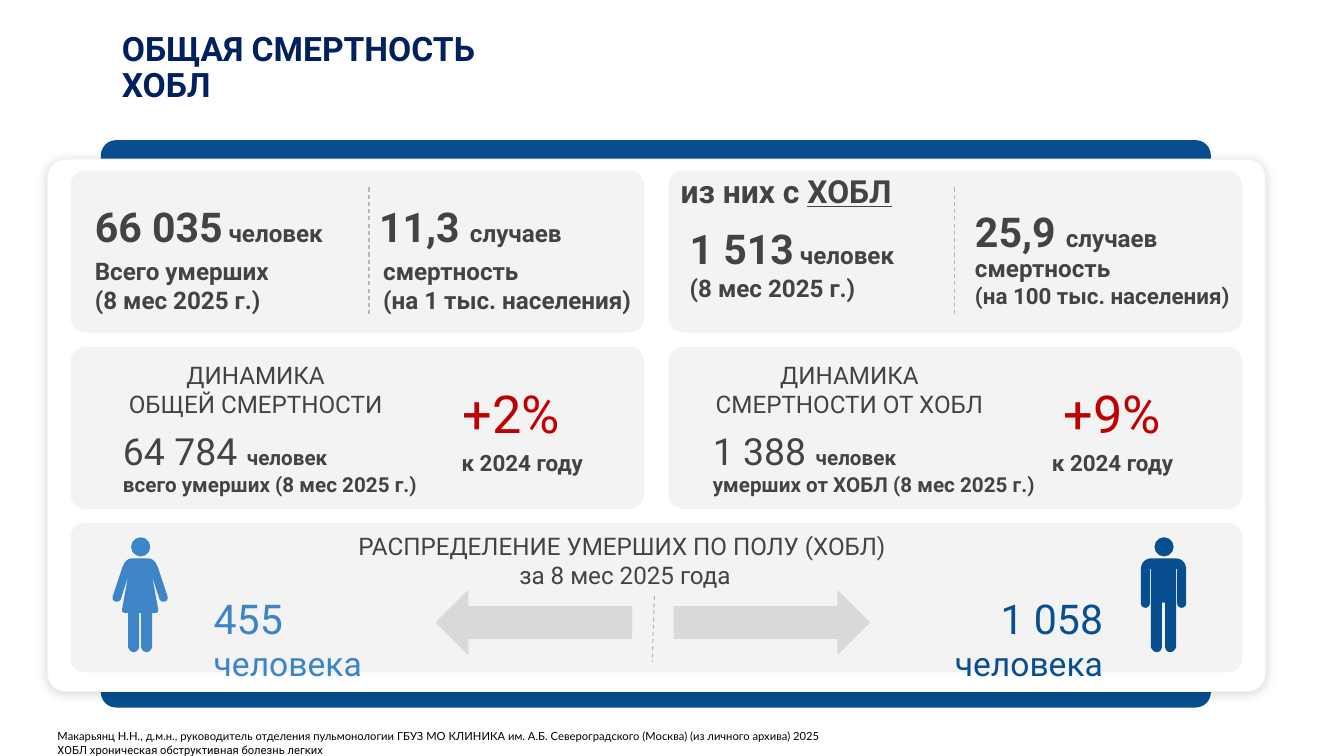
from lxml.etree import SubElement
from pptx import Presentation
from pptx.dml.color import RGBColor
from pptx.enum.dml import MSO_LINE
from pptx.enum.shapes import MSO_CONNECTOR, MSO_SHAPE
from pptx.enum.text import MSO_ANCHOR, MSO_AUTO_SIZE, PP_ALIGN
from pptx.oxml.ns import qn
from pptx.util import Inches, Pt

NAVY, BLUE, SKY, RED = "002060", "084F91", "3D85C6", "C00000"
DARK, PALE, GREY, RULE = "434343", "F3F3F3", "D9D9D9", "B7B7B7"
BIG = {"size": 29.3, "bold": True}
MID = {"size": 17.3, "bold": True}
SMALL = {"size": 14.7, "bold": True}
PLAIN = {"size": 17.3}
PAD = (0.13, 0.07)

# Right half of each figure, in hundredths of an inch from the top centre:
# a pair is a straight step, six numbers are a Bezier step.
MAN = [(0, 21), (12.5, 21), (18.5, 21, 22.5, 26, 22.5, 32), (22.5, 65),
       (22.5, 68, 20.5, 70, 18, 70), (15.5, 70, 13.5, 68, 13.5, 65),
       (13.5, 32), (13.5, 31, 12.5, 31, 12.5, 32), (12.5, 108),
       (12.5, 111, 9.5, 114, 6.5, 114), (3.5, 114, 1.5, 111, 1.5, 108),
       (1.5, 65), (0, 65)]
WOMAN = [(0, 21), (8, 21), (13, 21, 16, 25, 18, 31), (27, 58),
         (28, 61, 27, 63, 24, 64), (21, 64, 20, 63, 19, 61), (12, 39),
         (18, 72), (18, 74, 17, 75, 15, 75), (12, 75), (12, 108),
         (12, 111, 9, 114, 6.5, 114), (3, 114, 1, 111, 1, 108),
         (1, 75), (0, 75)]


def color(code):
    return RGBColor.from_string(code)


def paint(shape, fill):
    shape.shadow.inherit = False
    shape.fill.solid()
    shape.fill.fore_color.rgb = color(fill)
    shape.line.fill.background()


def block(shapes, kind, box, fill, round=None):
    shape = shapes.add_shape(kind, *map(Inches, box))
    if round is not None:
        shape.adjustments[0] = round
    paint(shape, fill)
    return shape


def write(slide, box, lines, tint=DARK, align=PP_ALIGN.LEFT, pad=(0, 0),
          anchor=MSO_ANCHOR.TOP, space=None, fit=MSO_AUTO_SIZE.SHAPE_TO_FIT_TEXT):
    """Add a text box; each line is a list of (text, font values) runs."""
    frame = slide.shapes.add_textbox(*map(Inches, box)).text_frame
    side, edge = map(Inches, pad)
    values = {"word_wrap": True, "auto_size": fit, "vertical_anchor": anchor,
              "margin_left": side, "margin_right": side,
              "margin_top": edge, "margin_bottom": edge}
    for name, value in values.items():
        setattr(frame, name, value)
    for num, line in enumerate(lines):
        para = frame.add_paragraph() if num else frame.paragraphs[0]
        para.alignment = align
        if space:
            para.line_spacing = space
        for text, font in line:
            run = para.add_run()
            run.text = text
            run.font.color.rgb = color(tint)
            for name, value in {"name": "Roboto", **font}.items():
                setattr(run.font, name, Pt(value) if name == "size" else value)


def divide(slide, x1, y1, x2, y2):
    """Draw a dashed divider."""
    line = slide.shapes.add_connector(MSO_CONNECTOR.STRAIGHT,
                                      *map(Inches, (x1, y1, x2, y2)))
    line.line.color.rgb = color(RULE)
    line.line.width = Pt(0.75)
    line.line.dash_style = MSO_LINE.DASH
    SubElement(line._element.spPr, qn("a:effectLst"))


def trace(half):
    """Return the points of a half outline, with its curves sampled."""
    points = [half[0]]
    for step in half[1:]:
        if len(step) == 2:
            points.append(step)
            continue
        ends = [points[-1], step[:2], step[2:4], step[4:]]
        for t in (n / 8 for n in range(1, 9)):
            weights = ((1 - t) ** 3, 3 * t * (1 - t) ** 2, 3 * t * t * (1 - t), t ** 3)
            points.append(tuple(sum(w * end[axis] for w, end in zip(weights, ends))
                                for axis in (0, 1)))
    return points


def figure(slide, mid, top, half, fill):
    right = trace(half)
    points = [(Inches(mid + x / 100), Inches(top + y / 100))
              for x, y in right + [(-x, y) for x, y in reversed(right)]]
    group = slide.shapes.add_group_shape().shapes
    form = group.build_freeform(*points[0])
    form.add_line_segments(points[1:], close=True)
    paint(form.convert_to_shape(), fill)
    block(group, MSO_SHAPE.OVAL, (mid - 0.09, top, 0.19, 0.19), fill)


def panel(slide, box):
    block(slide.shapes, MSO_SHAPE.ROUNDED_RECTANGLE, box, PALE, 0.093)
    return box[:2]


def backing(slide, box):
    """Draw the blue plate and the white card with a soft shadow."""
    x, y, wide, high = box
    kind = MSO_SHAPE.ROUNDED_RECTANGLE
    block(slide.shapes, kind, (x + 0.53, y, 11.01, high), BLUE, 0.027)
    card = block(slide.shapes, kind, (x, y + 0.19, wide, 5.28), "FFFFFF", 0.033)
    card.line.color.rgb = color(PALE)
    card.line.width = Pt(0.75)
    effects = card._element.spPr.find(qn("a:effectLst"))
    shade = SubElement(effects, qn("a:outerShdw"), blurRad=str(Pt(7.9)),
                       dist=str(Pt(1.5)), dir="5400000", algn="bl", rotWithShape="0")
    tone = SubElement(shade, qn("a:srgbClr"), val="000000")
    SubElement(tone, qn("a:alpha"), val="17000")


def totals(slide, box, split, texts):
    """Draw a panel of figures; each text is (dx, dy, width, height, lines)."""
    x, y = panel(slide, box)
    for dx, dy, wide, high, lines in texts:
        write(slide, (x + dx, y + dy, wide, high), lines)
    divide(slide, x + split, y + 0.17, x + split, y + 1.45)


def trend(slide, box, head, count, note, change, spans):
    """Draw a panel of change; spans give (dx, width) of its four columns."""
    x, y = panel(slide, box)
    top, base, rate, year = [(x + dx, wide) for dx, wide in spans]
    mid = PP_ALIGN.CENTER
    write(slide, (top[0], y + 0.06, top[1], 0.72),
          [[(text, PLAIN)] for text in head], align=mid, pad=PAD)
    write(slide, (base[0], y + 0.81, base[1], 0.45),
          [[(count, {"size": 26.7}), ("человек", SMALL)]])
    write(slide, (base[0], y + 1.24, base[1], 0.25), [[(note, SMALL)]])
    write(slide, (rate[0], y + 0.27, rate[1], 0.76),
          [[(change, {"size": 37.3})]], RED, mid, PAD)
    write(slide, (year[0], y + 1.02, year[1], 0.27),
          [[("к 2024 году", {"size": 16, "bold": True})]], align=mid)


def gender(slide, box):
    x, y = panel(slide, box)
    write(slide, (x + 0.3, y + 0.01, 10.4, 0.72),
          [[("РАСПРЕДЕЛЕНИЕ УМЕРШИХ ПО ПОЛУ (ХОБЛ) ", PLAIN)],
           [("за 8 мес 2025 года", PLAIN)]], align=PP_ALIGN.CENTER, pad=PAD)
    sides = [(0.69, WOMAN, SKY, "455 ", 1.42, 2.1, PP_ALIGN.LEFT, 3.62, 0),
             (10.84, MAN, BLUE, "1 058 ", 7.73, 2.51, PP_ALIGN.RIGHT, 5.98, 180)]
    for mid, half, tint, count, dx, wide, align, tip, turn in sides:
        figure(slide, x + mid, y + 0.14, half, tint)
        write(slide, (x + dx, y + 0.7, wide, 0.9),
              [[(count, {"size": 29.3}), ("человека", {"size": 24})]], tint, align)
        arrow = block(slide.shapes, MSO_SHAPE.LEFT_ARROW,
                      (x + tip, y + 0.66, 1.95, 0.65), GREY)
        arrow.rotation = turn
    divide(slide, x + 5.79, y + 0.72, x + 5.77, y + 1.38)


def main():
    deck = Presentation()
    deck.slide_width, deck.slide_height = Inches(13.33), Inches(7.5)
    slide = deck.slides.add_slide(deck.slide_layouts[6])
    title = {"size": 24, "bold": True}
    write(slide, (1.11, 0.27, 12.22, 0.82),
          [[("ОБЩАЯ СМЕРТНОСТЬ", title)], [("ХОБЛ", title)]], NAVY,
          pad=(0.1, 0.05), anchor=MSO_ANCHOR.MIDDLE, space=0.9, fit=MSO_AUTO_SIZE.NONE)
    backing(slide, (0.47, 1.39, 12.08, 5.63))

    wide, high, gap = 5.69, 1.61, 0.24
    left, right = 0.7, 0.7 + wide + gap
    rows = [1.69 + 1.75 * n for n in range(3)]
    head = {"size": 22.7, "bold": True}
    totals(slide, (left, rows[0], wide, high), 2.96, [
        (0.24, 0.31, 2.51, 0.49, [[("66 035", BIG), (" человек", MID)]]),
        (0.24, 0.85, 1.95, 0.58, [[("Всего умерших (8 мес 2025 г.)", MID)]]),
        (3.06, 0.31, 2.28, 0.49, [[("11,3 ", BIG), ("случаев", MID)]]),
        (3.1, 0.85, 2.99, 0.58,
         [[("смертность", MID)], [("(на 1 тыс. населения)", MID)]])])
    totals(slide, (right, rows[0], wide, high), 2.84, [
        (0.12, 0.01, 2.28, 0.38,
         [[("из них c ", head), ("ХОБЛ", {**head, "underline": True})]]),
        (0.21, 0.53, 2.1, 0.79,
         [[("1 513", BIG), (" человек", MID)], [("(8 мес 2025 г.)", MID)]]),
        (3.04, 0.36, 2.22, 0.49, [[("25,9 ", BIG), ("случаев", MID)]]),
        (3.04, 0.82, 3.15, 0.56, [[("смертность", MID)],
                                  [("(на 100 тыс. населения)", {**MID, "size": 16})]])])
    trend(slide, (left, rows[1], wide, high), ["ДИНАМИКА", "ОБЩЕЙ СМЕРТНОСТИ"],
          "64 784 ", "всего умерших (8 мес 2025 г.)", "+2%",
          [(0.24, 3.19), (0.52, 3.1), (3.65, 1.44), (3.47, 2.02)])
    trend(slide, (right, rows[1], wide, high), ["ДИНАМИКА", "СМЕРТНОСТИ ОТ ХОБЛ"],
          "1 388 ", "умерших от ХОБЛ (8 мес 2025 г.)", "+9%",
          [(0.15, 3.29), (0.44, 3.35), (3.29, 2.22), (3.78, 1.25)])
    gender(slide, (left, rows[2], 2 * wide + gap, 1.48))
    write(slide, (0.44, 7.11, 11.65, 0.54),
          [[("Макарьянц Н.Н., д.м.н., руководитель отделения пульмонологии ГБУЗ МО "
             "КЛИНИКА им. А.Б. Североградского (Москва) (из личного архива) 2025",
             {"name": "Lato", "size": 8})],
           [("ХОБЛ хроническая обструктивная болезнь легких", {"size": 8})]],
          "000000", pad=(0.13, 0.13))
    deck.save("out.pptx")


if __name__ == "__main__":
    main()
